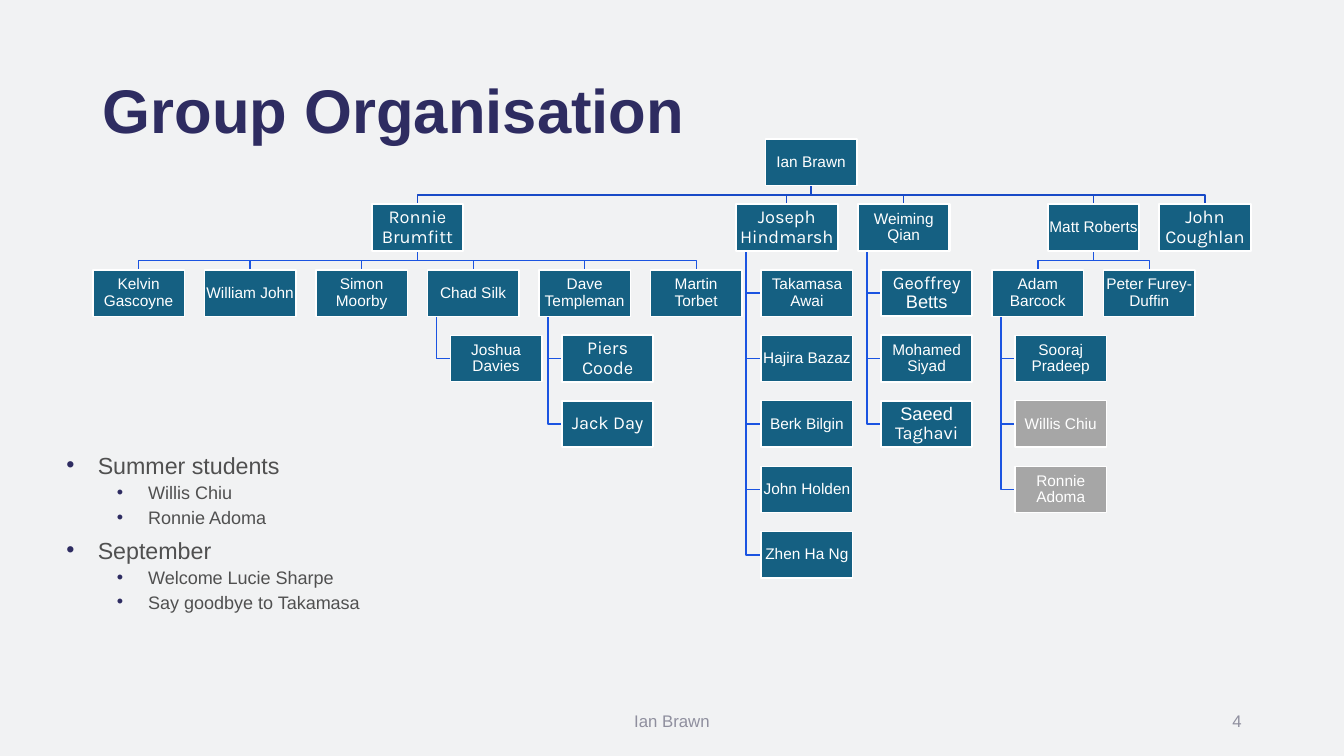
from dataclasses import dataclass, field
from typing import Optional

from lxml import etree
from pptx import Presentation
from pptx.dml.color import RGBColor
from pptx.enum import shapes, text
from pptx.oxml import ns
from pptx.util import Cm, Pt


@dataclass(frozen=True)
class Theme:
    background: str = "F1F2F3"
    navy: str = "2E2C61"
    body: str = "505050"
    footer: str = "8F8F9E"
    staff: str = "156082"
    student: str = "A6A6A6"
    white: str = "FFFFFF"
    top_link: str = "184AC7"
    link: str = "1B54E1"
    sans: str = "Arial"
    accent: str = "Karla"
    title_size: float = 44
    list_sizes: tuple = (16.6, 12.9)
    name_size: float = 11
    accent_size: float = 13
    footer_size: float = 12
    thin: float = 1
    thick: float = 1.5


THEME = Theme()
BOX_W, BOX_H, HINDMARSH_W = 2.31, 1.17, 2.57
CHART_TOP, ROW_PITCH, COL_LEFT, COL_PITCH = 3.5, 1.65, 2.34, 2.81
TRUNK_SHARE, INDENT_SHARE = 0.1, 0.25


@dataclass
class Person:
    name: str
    x: Optional[float] = None
    reports: list = field(default_factory=list)
    accent: str = ""
    size: float = THEME.name_size
    edge: float = THEME.thin
    fill: str = THEME.staff
    w: float = BOX_W
    y: float = 0

    @property
    def centre(self):
        return self.x + self.w / 2

    @property
    def bottom(self):
        return self.y + BOX_H


def edged(name, x=None, reports=(), **values):
    return Person(name, x, list(reports), edge=THEME.thick, **values)


def accented(name, x=None, reports=(), accent=None, **values):
    return edged(name, x, reports, accent=name if accent is None else accent,
                 size=THEME.accent_size, **values)


def team(*names):
    return [Person(name) for name in names]


def organisation():
    ronnie_team = team("Kelvin Gascoyne", "William John", "Simon Moorby",
                       "Chad Silk", "Dave Templeman", "Martin Torbet")
    for i, person in enumerate(ronnie_team):
        person.x = COL_LEFT + i * COL_PITCH
    ronnie_team[3].reports = team("Joshua Davies")
    ronnie_team[4].reports = [accented("Piers Coode"), accented("Jack Day")]
    joseph_team = team("Takamasa Awai", "Hajira Bazaz", "Berk Bilgin",
                       "John Holden", "Zhen Ha Ng")
    weiming_team = [accented("Geoffrey Betts", accent="Geoffrey"),
                    edged("Mohamed Siyad"),
                    accented("Saeed Taghavi", accent="Taghavi")]
    students = [Person(name, fill=THEME.student)
                for name in ("Willis Chiu", "Ronnie Adoma")]
    matt_team = [Person("Adam Barcock", 25, team("Sooraj Pradeep") + students),
                 Person("Peter Furey-Duffin", 25 + COL_PITCH)]
    return Person("Ian Brawn", reports=[
        accented("Ronnie Brumfitt", reports=ronnie_team),
        accented("Joseph Hindmarsh", 18.54, joseph_team, w=HINDMARSH_W),
        edged("Weiming Qian", 21.62, weiming_team),
        edged("Matt Roberts", reports=matt_team),
        accented("John Coughlan", 29.21)])


def apply(target, values):
    for name, value in values.items():
        setattr(target, name, value)


def add_run(p, content, size, color, font=THEME.sans, bold=False):
    r = p.add_run()
    r.text = content
    apply(r.font, {"size": Pt(size), "name": font, "bold": bold})
    r.font.color.rgb = RGBColor.from_string(color)


def set_place(s, left, top, width, height):
    apply(s, {"left": Cm(left), "top": Cm(top),
              "width": Cm(width), "height": Cm(height)})


def set_line(s, color, width):
    s.line.color.rgb = RGBColor.from_string(color)
    s.line.width = Pt(width)
    s.shadow.inherit = False


def place(person, row=0):
    person.y = CHART_TOP + row * ROW_PITCH
    hanging = person.x is not None
    for i, report in enumerate(person.reports):
        if hanging:
            report.x = person.x + INDENT_SHARE * person.w
        place(report, row + 1 + (i if hanging else 0))
    if not hanging:
        ends = person.reports[0].centre, person.reports[-1].centre
        person.x = (sum(ends) - person.w) / 2
        person.links = [across(person, report) for report in person.reports]
    else:
        person.links = [down(person, report) for report in person.reports]


def across(boss, report):
    bus = (boss.bottom + report.y) / 2
    return [(boss.centre, boss.bottom), (boss.centre, bus),
            (report.centre, bus), (report.centre, report.y)]


def down(boss, report):
    trunk = boss.x + TRUNK_SHARE * boss.w
    middle = report.y + BOX_H / 2
    return [(trunk, boss.bottom), (trunk, middle), (report.x, middle)]


def everyone(person):
    yield person
    for report in person.reports:
        yield from everyone(report)


def add_link(sp, points, color):
    start, *rest = [(Cm(x), Cm(y)) for x, y in points]
    builder = sp.build_freeform(*start)
    builder.add_line_segments(rest, close=False)
    s = builder.convert_to_shape()
    s.fill.background()
    set_line(s, color, THEME.thin)


def add_person(sp, person):
    s = sp.add_shape(shapes.MSO_SHAPE.RECTANGLE, Cm(person.x), Cm(person.y),
                     Cm(person.w), Cm(BOX_H))
    s.fill.solid()
    s.fill.fore_color.rgb = RGBColor.from_string(person.fill)
    set_line(s, THEME.white, person.edge)
    tf = s.text_frame
    apply(tf, {"word_wrap": True, "vertical_anchor": text.MSO_ANCHOR.MIDDLE})
    apply(tf, {f"margin_{side}": Cm(0.03)
               for side in ("left", "top", "right", "bottom")})
    p = tf.paragraphs[0]
    apply(p, {"alignment": text.PP_ALIGN.CENTER, "line_spacing": 0.9})
    before, _, after = (person.name.partition(person.accent)
                        if person.accent else (person.name, "", ""))
    for part, font in ((before, THEME.sans), (person.accent, THEME.accent),
                       (after, THEME.sans)):
        if part:
            add_run(p, part, person.size, THEME.white, font)


def add_chart_tree(sp, root):
    place(root)
    people = list(everyone(root))
    for person in people:
        for points in person.links:
            add_link(sp, points,
                     THEME.top_link if person is root else THEME.link)
    for person in people:
        add_person(sp, person)


def set_title(s, content):
    set_place(s, 2.34, 1.02, 29.2, 3.68)
    tf = s.text_frame
    apply(tf, {"vertical_anchor": text.MSO_ANCHOR.MIDDLE, "word_wrap": True,
               "auto_size": text.MSO_AUTO_SIZE.NONE})
    p = tf.paragraphs[0]
    apply(p, {"alignment": text.PP_ALIGN.LEFT, "line_spacing": 0.9})
    add_run(p, content, THEME.title_size, THEME.navy, bold=True)


def add_bullet(p, margin):
    pPr = p._p.get_or_add_pPr()
    pPr.set("marL", str(Cm(margin)))
    pPr.set("indent", str(Cm(-0.79)))
    color = etree.SubElement(pPr, ns.qn("a:buClr"))
    etree.SubElement(color, ns.qn("a:srgbClr")).set("val", THEME.navy)
    etree.SubElement(pPr, ns.qn("a:buChar")).set("char", "•")


def set_list(s, items):
    set_place(s, 1.19, 11.38, 15.75, 4.39)
    tf = s.text_frame
    apply(tf, {"word_wrap": True, "auto_size": text.MSO_AUTO_SIZE.NONE,
               "vertical_anchor": text.MSO_ANCHOR.TOP})
    for i, (level, content) in enumerate(items):
        p = tf.add_paragraph() if i else tf.paragraphs[0]
        add_bullet(p, (1.02, 2.29)[level])
        apply(p, {"level": level, "line_spacing": 0.8,
                  "space_before": Pt((10, 5)[level] if i else 0)})
        add_run(p, content, THEME.list_sizes[level], THEME.body)


def add_footer(sp, content, left, width, alignment):
    tf = sp.add_textbox(Cm(left), Cm(17.65), Cm(width), Cm(1.02)).text_frame
    apply(tf, {"word_wrap": True, "vertical_anchor": text.MSO_ANCHOR.MIDDLE})
    p = tf.paragraphs[0]
    p.alignment = alignment
    add_run(p, content, THEME.footer_size, THEME.footer)


def main():
    prs = Presentation()
    apply(prs, {"slide_width": Cm(33.87), "slide_height": Cm(19.05)})
    slide = prs.slides.add_slide(prs.slide_layouts[1])
    slide.background.fill.solid()
    slide.background.fill.fore_color.rgb = RGBColor.from_string(THEME.background)
    sp = slide.shapes
    set_title(sp.title, "Group Organisation")
    set_list(slide.placeholders[1], [
        (0, "Summer students"), (1, "Willis Chiu"), (1, "Ronnie Adoma"),
        (0, "September"), (1, "Welcome Lucie Sharpe"),
        (1, "Say goodbye to Takamasa")])
    add_chart_tree(sp, organisation())
    add_footer(sp, "Ian Brawn", 11.22, 11.43, text.PP_ALIGN.CENTER)
    add_footer(sp, "4", 23.92, 7.62, text.PP_ALIGN.RIGHT)
    prs.save("out.pptx")


if __name__ == "__main__":
    main()
